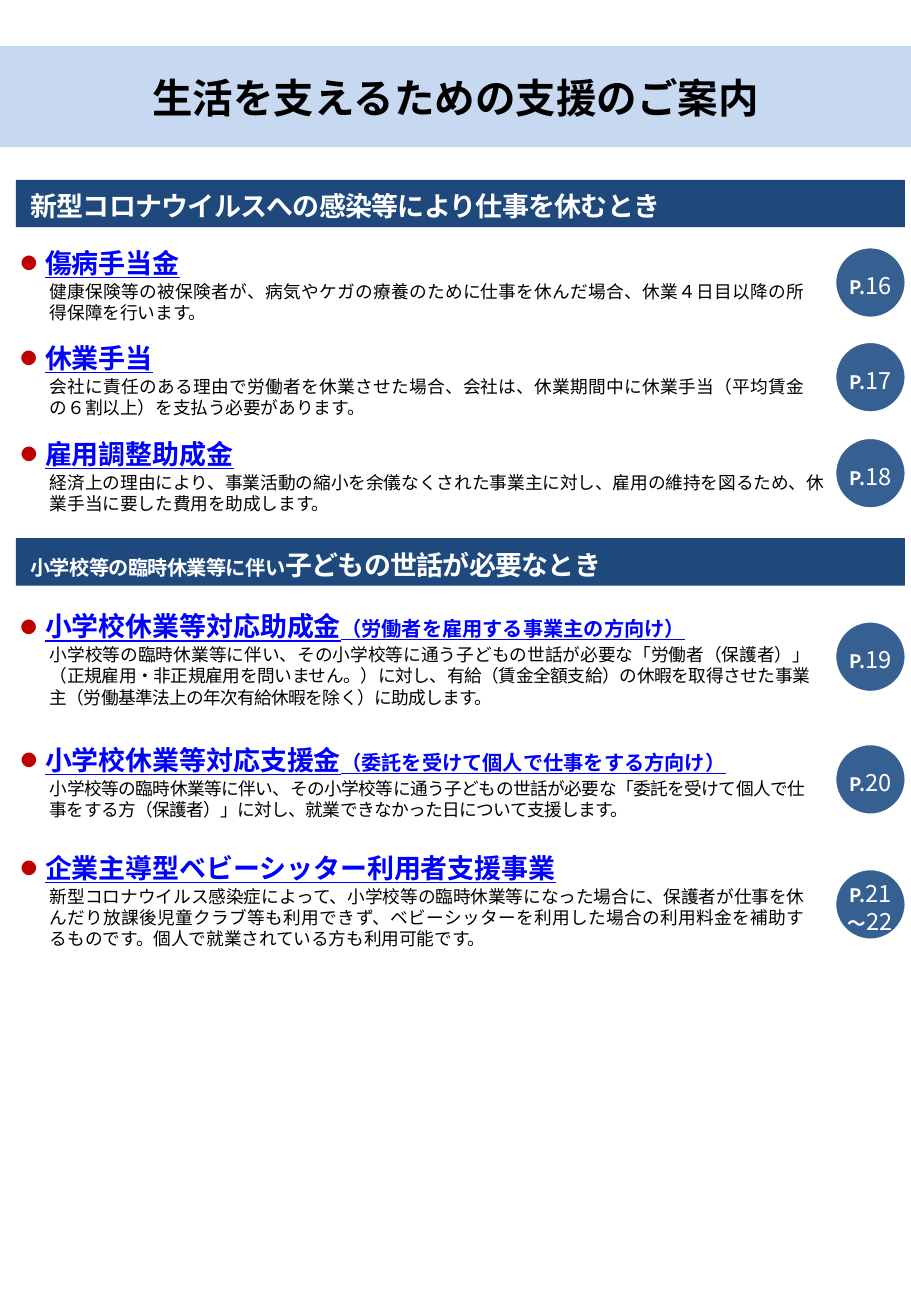
from lxml import etree
from pptx import Presentation
from pptx.dml.color import RGBColor
from pptx.enum.shapes import MSO_SHAPE
from pptx.enum.text import MSO_ANCHOR, PP_ALIGN
from pptx.oxml.ns import qn
from pptx.util import Pt

RECTANGLE, OVAL = MSO_SHAPE.RECTANGLE, MSO_SHAPE.OVAL
MIDDLE = MSO_ANCHOR.MIDDLE
CENTER, JUSTIFY = PP_ALIGN.CENTER, PP_ALIGN.JUSTIFY
FONT = "Noto Sans CJK JP"
WHITE, BLACK, LINK_BLUE = "FFFFFF", "000000", "0000FF"
NAVY, PALE_BLUE, BADGE_BLUE, BULLET_RED = "1F497D", "C6D9F1", "376092", "C00000"
SLIDE_WIDTH, SLIDE_HEIGHT = 540, 780
BADGE_SIZE = 42.5

SICK_LEAVE = [
    (143.3, [("傷病手当金", 16)], [("P.", 11), ("16", 14)], 2.9, 447.8, 0,
     "健康保険等の被保険者が、病気やケガの療養のために仕事を休んだ場合、休業４日目以降の所得保障を行います。"),
    (199.4, [("休業手当", 16)], [("P.", 11), ("17", 14)], 2.9, 447.8, 0,
     "会社に責任のある理由で労働者を休業させた場合、会社は、休業期間中に休業手当（平均賃金の６割以上）を支払う必要があります。"),
    (256.3, [("雇用調整助成金", 16)], [("P.", 11), ("18", 14)], 2.9, 459.4, 0,
     "経済上の理由により、事業活動の縮小を余儀なくされた事業主に対し、雇用の維持を図るため、休業手当に要した費用を助成します。"),
]
CHILD_CARE = [
    (358.6, [("小学校休業等対応助成金", 16), ("（労働者を雇用する事業主の方向け）", 12)],
     [("P.", 11), ("19", 14)], 9.4, 450.7, -0.3,
     "小学校等の臨時休業等に伴い、その小学校等に通う子どもの世話が必要な「労働者（保護者）」（正規雇用・非正規雇用を問いません。）に対し、有給（賃金全額支給）の休暇を取得させた事業主（労働基準法上の年次有給休暇を除く）に助成します。"),
    (437.8, [("小学校休業等対応支援金", 16), ("（委託を受けて個人で仕事をする方向け）", 12)],
     [("P.", 11), ("20", 14)], 2.9, 447.8, -0.3,
     "小学校等の臨時休業等に伴い、その小学校等に通う子どもの世話が必要な「委託を受けて個人で仕事をする方（保護者）」に対し、就業できなかった日について支援します。"),
    (501.8, [("企業主導型ベビーシッター利用者支援事業", 16)],
     [("P.", 11), ("21", 14), ("～", 11), ("22", 14)], 13, 447.8, 0,
     "新型コロナウイルス感染症によって、小学校等の臨時休業等になった場合に、保護者が仕事を休んだり放課後児童クラブ等も利用できず、ベビーシッターを利用した場合の利用料金を補助するものです。個人で就業されている方も利用可能です。"),
]


def rgb(color):
    """Turn a hex string into a colour."""
    return RGBColor.from_string(color)


def set_insets(frame, left, top, right, bottom):
    """Set the four margins of a text frame."""
    frame.margin_left, frame.margin_top = Pt(left), Pt(top)
    frame.margin_right, frame.margin_bottom = Pt(right), Pt(bottom)


def write(paragraph, parts, color, bold=False, spacing=0):
    """Write sized parts into a paragraph with one shared font."""
    font = paragraph.font
    font.name, font.bold = FONT, bold
    font.color.rgb = rgb(color)
    defaults = paragraph._p.pPr.find(qn("a:defRPr"))
    etree.SubElement(defaults, qn("a:ea")).set("typeface", FONT)
    if spacing:
        defaults.set("spc", str(round(spacing * 100)))
    sizes = {size for _, size in parts}
    if len(sizes) == 1:
        font.size = Pt(parts[0][1])
    for text, size in parts:
        run = paragraph.add_run()
        run.text = text
        if len(sizes) > 1:
            run.font.size = Pt(size)


def add_bullet(paragraph):
    """Give a paragraph a red hanging bullet."""
    properties = paragraph._p.get_or_add_pPr()
    properties.set("marL", str(Pt(14.4)))
    properties.set("indent", str(Pt(-17.3)))
    bullet_color = etree.SubElement(properties, qn("a:buClr"))
    etree.SubElement(bullet_color, qn("a:srgbClr")).set("val", BULLET_RED)
    etree.SubElement(properties, qn("a:buSzPct")).set("val", "60000")
    etree.SubElement(properties, qn("a:buFont")).set("typeface", FONT)
    etree.SubElement(properties, qn("a:buChar")).set("char", "●")


def add_filled(slide, kind, left, top, width, height, color):
    """Add a flat filled shape with vertically centred text."""
    shape = slide.shapes.add_shape(kind, Pt(left), Pt(top), Pt(width), Pt(height))
    shape.shadow.inherit = False
    shape.fill.solid()
    shape.fill.fore_color.rgb = rgb(color)
    shape.line.fill.background()
    shape.text_frame.vertical_anchor = MIDDLE
    return shape


def add_title(slide, left, top, width, height):
    """Add the title band."""
    band = add_filled(slide, RECTANGLE, left, top, width, height, PALE_BLUE)
    paragraph = band.text_frame.paragraphs[0]
    paragraph.alignment, paragraph.line_spacing = CENTER, Pt(29)
    write(paragraph, [("生活を支えるための支援のご案内", 24)], BLACK, bold=True)


def add_badge(slide, left, top, parts):
    """Add a round page-number badge."""
    badge = add_filled(slide, OVAL, left, top, BADGE_SIZE, BADGE_SIZE, BADGE_BLUE)
    badge.line.color.rgb = rgb(WHITE)
    badge.line.width = Pt(2)
    set_insets(badge.text_frame, 0, 2.9, 0, 0)
    paragraph = badge.text_frame.paragraphs[0]
    paragraph.alignment = CENTER
    write(paragraph, parts, WHITE)
    for label in paragraph.runs[::2]:
        label.font.bold = True


def add_text(slide, left, top, width, height, right_inset, wrap):
    """Add a text box and return its first paragraph."""
    box = slide.shapes.add_textbox(Pt(left), Pt(top), Pt(width), Pt(height))
    box.text_frame.word_wrap = wrap
    set_insets(box.text_frame, 0, 2.9, right_inset, 0)
    paragraph = box.text_frame.paragraphs[0]
    paragraph.space_before = Pt(3)
    return paragraph


def add_item(slide, left, top, item):
    """Add one support scheme: heading, description and page badge."""
    _, heading, pages, badge_drop, body_width, spacing, description = item
    add_badge(slide, left + 482.4, top + badge_drop, pages)
    heading_width = sum(len(text) * size for text, size in heading) + 17.3
    title = add_text(slide, left, top, heading_width, 22.3, 2.9, False)
    add_bullet(title)
    write(title, heading, LINK_BLUE, bold=True)
    title.font.underline = True
    body = add_text(slide, left + 17.3, top + 20.2, body_width, 28.1, 0, True)
    body.alignment = JUSTIFY
    write(body, [(description, 10.5)], BLACK, spacing=spacing)


def add_section(slide, left, top, width, heading, items):
    """Add a section bar and the schemes under it."""
    bar = add_filled(slide, RECTANGLE, left, top, width, 28.1, NAVY)
    bar.text_frame.word_wrap = False
    set_insets(bar.text_frame, 8.6, 5.8, 5.8, 2.9)
    paragraph = bar.text_frame.paragraphs[0]
    paragraph.alignment = PP_ALIGN.LEFT
    write(paragraph, heading, WHITE, bold=True, spacing=-0.4)
    for item in items:
        add_item(slide, left + 2.9, item[0], item)


def main():
    """Build the guide page and save it."""
    deck = Presentation()
    deck.slide_width, deck.slide_height = Pt(SLIDE_WIDTH), Pt(SLIDE_HEIGHT)
    slide = deck.slides.add_slide(deck.slide_layouts[6])
    add_title(slide, 0, 27.4, SLIDE_WIDTH, 59.8)
    add_section(slide, 9.4, 106.6, 527, [("新型コロナウイルスへの感染等により仕事を休むとき", 16)], SICK_LEAVE)
    add_section(slide, 9.4, 319, 527,
                [("小学校等の臨時休業等に伴い", 12), ("子どもの世話が必要なとき", 16)], CHILD_CARE)
    deck.save("out.pptx")


if __name__ == "__main__":
    main()
